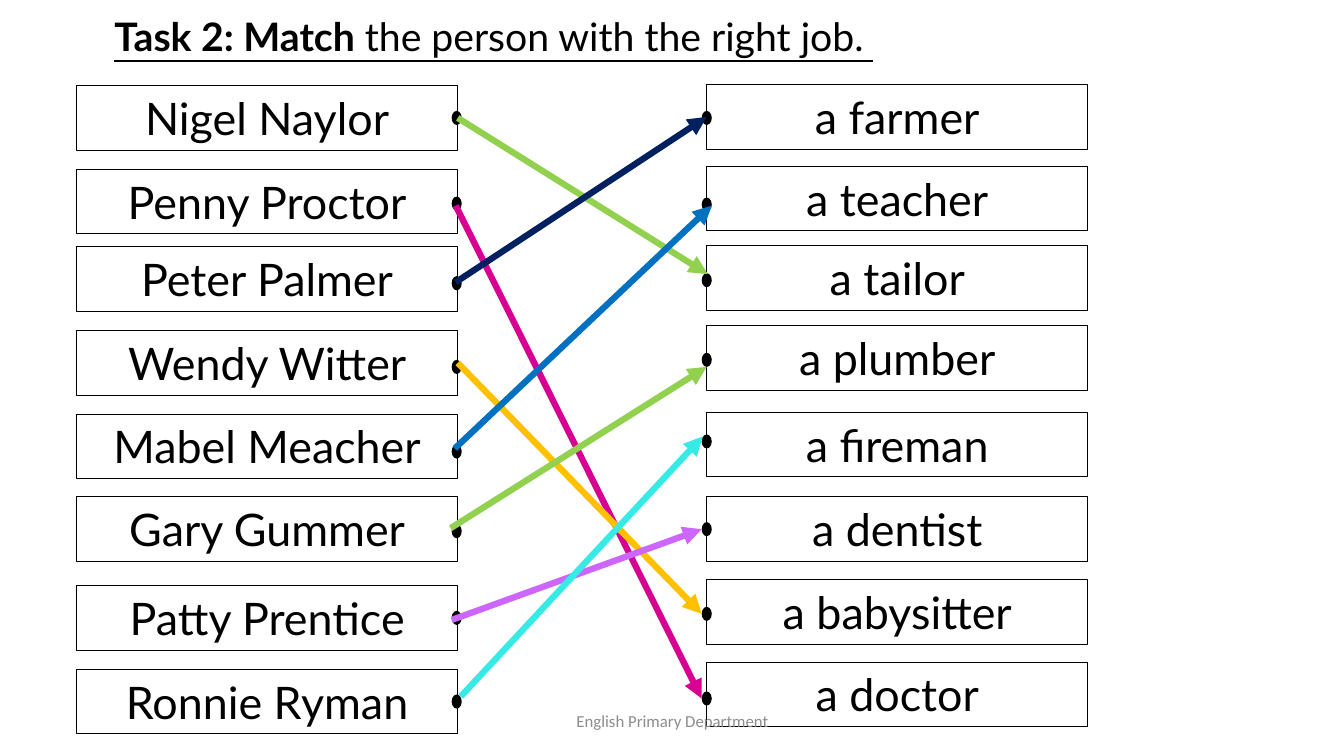
from lxml import etree
from pptx import Presentation
from pptx.dml.color import RGBColor
from pptx.enum import shapes, text
from pptx.oxml.ns import qn
from pptx.util import Inches, Pt

# Content: label, top of box, top of dot
PEOPLE = [
    ("Nigel Naylor", 0.85, 1.10),
    ("Penny Proctor", 1.68, 1.95),
    ("Peter Palmer", 2.45, 2.74),
    ("Wendy Witter", 3.28, 3.57),
    ("Mabel Meacher", 4.11, 4.41),
    ("Gary Gummer", 4.93, 5.20),
    ("Patty Prentice", 5.81, 6.06),
    ("Ronnie Ryman", 6.64, 6.89),
]
JOBS = [
    ("a farmer", 0.84, 1.10),
    ("a teacher", 1.65, 1.96),
    ("a tailor", 2.44, 2.71),
    ("a plumber", 3.23, 3.50),
    ("a fireman", 4.09, 4.31),
    ("a dentist", 4.93, 5.18),
    ("a babysitter", 5.75, 6.02),
    ("a doctor", 6.57, 6.86),
]
# Person, job, start point, end point, colour
MATCHES = [
    ("Nigel Naylor", "a tailor", (4.53, 1.16), (7.02, 2.72), "green"),
    ("Penny Proctor", "a doctor", (4.52, 2.04), (6.96, 6.93), "magenta"),
    ("Peter Palmer", "a farmer", (4.52, 2.80), (7.01, 1.16), "navy"),
    ("Wendy Witter", "a babysitter", (4.53, 3.60), (6.96, 6.09), "amber"),
    ("Mabel Meacher", "a teacher", (4.51, 4.45), (7.06, 2.04), "blue"),
    ("Gary Gummer", "a plumber", (4.47, 5.24), (7.01, 3.64), "green"),
    ("Patty Prentice", "a dentist", (4.48, 6.15), (6.96, 5.25), "violet"),
    ("Ronnie Ryman", "a fireman", (4.57, 6.91), (6.97, 4.33), "cyan"),
]
TITLE_RUNS = [("Task 2: Match", True), (" the person with the right job. ", False)]
FOOTER = "English Primary Department"

COLOURS = {
    "black": "000000", "white": "FFFFFF", "grey": "8C8C8C", "green": "92D050",
    "magenta": "D60093", "navy": "002060", "amber": "FFC000", "blue": "0070C0",
    "violet": "CC66FF", "cyan": "36EAE6",
}
BOX_WIDTH, BOX_HEIGHT = 3.78, 0.64
DOT_WIDTH, DOT_HEIGHT = 0.10, 0.14
PEOPLE_LEFT, JOBS_LEFT = 0.76, 7.01
LEFT_SIDE, RIGHT_SIDE = 1, 3
JOIN_DISTANCE = 0.02


def colour(name):
    return RGBColor.from_string(COLOURS[name])


def add_run(paragraph, words, font_colour="black", **font_format):
    run = paragraph.add_run()
    run.text = words
    run.font.color.rgb = colour(font_colour)
    for name, value in font_format.items():
        setattr(run.font, name, value)


def add_filled(slide, kind, left, top, width, height, fill):
    shape = slide.shapes.add_shape(
        kind, Inches(left), Inches(top), Inches(width), Inches(height))
    shape.shadow.inherit = False
    shape.fill.solid()
    shape.fill.fore_color.rgb = colour(fill)
    shape.line.fill.background()
    return shape


def add_box(slide, left, top, label):
    box = add_filled(slide, shapes.MSO_SHAPE.RECTANGLE,
                     left, top, BOX_WIDTH, BOX_HEIGHT, "white")
    box.line.color.rgb = colour("black")
    box.line.width = Pt(0.75)
    box.text_frame.vertical_anchor = text.MSO_ANCHOR.TOP
    paragraph = box.text_frame.paragraphs[0]
    paragraph.alignment = text.PP_ALIGN.CENTER
    add_run(paragraph, label, name="Lato", size=Pt(32))
    return box


def add_arrow(slide, start, end, line_colour):
    arrow = slide.shapes.add_connector(
        shapes.MSO_CONNECTOR.STRAIGHT, *(Inches(value) for value in start + end))
    arrow.line.color.rgb = colour(line_colour)
    arrow.line.width = Pt(4.5)
    line = arrow.line._get_or_add_ln()
    etree.SubElement(line, qn("a:tailEnd"), type="triangle")
    etree.SubElement(arrow._element.spPr, qn("a:effectLst"))
    return arrow


def is_at(point, x, box_top):
    y = box_top + BOX_HEIGHT / 2
    return abs(point[0] - x) < JOIN_DISTANCE and abs(point[1] - y) < JOIN_DISTANCE


def main():
    presentation = Presentation()
    presentation.slide_width = Inches(13.33)
    presentation.slide_height = Inches(7.5)
    slide = presentation.slides.add_slide(presentation.slide_layouts[5])

    # Title
    title = slide.shapes.title
    title.left, title.top = Inches(-0.85), Inches(-0.13)
    title.width, title.height = Inches(11.5), Inches(1.45)
    frame = title.text_frame
    frame.word_wrap = True
    frame.auto_size = text.MSO_AUTO_SIZE.NONE
    frame.vertical_anchor = text.MSO_ANCHOR.TOP
    frame.margin_top = Inches(0.3)
    paragraph = frame.paragraphs[0]
    paragraph.alignment = text.PP_ALIGN.CENTER
    paragraph.line_spacing = 0.9
    for words, bold in TITLE_RUNS:
        add_run(paragraph, words, name="Lato", size=Pt(28), bold=bold, underline=True)

    # Boxes for people and jobs
    columns = [(PEOPLE, PEOPLE_LEFT, PEOPLE_LEFT + BOX_WIDTH - 0.01),
               (JOBS, JOBS_LEFT, JOBS_LEFT)]
    boxes, tops = {}, {}
    for entries, left, _ in columns:
        for label, top, _ in entries:
            boxes[label] = add_box(slide, left, top, label)
            tops[label] = top

    # Dots on the facing sides
    for entries, _, dot_centre in columns:
        for _, _, dot_top in entries:
            add_filled(slide, shapes.MSO_SHAPE.OVAL, dot_centre - DOT_WIDTH / 2,
                       dot_top, DOT_WIDTH, DOT_HEIGHT, "black")

    # Arrows, joined to a box where they meet the middle of its side
    for person, job, start, end, line_colour in MATCHES:
        arrow = add_arrow(slide, start, end, line_colour)
        if is_at(start, PEOPLE_LEFT + BOX_WIDTH, tops[person]):
            arrow.begin_connect(boxes[person], RIGHT_SIDE)
        if is_at(end, JOBS_LEFT, tops[job]):
            arrow.end_connect(boxes[job], LEFT_SIDE)

    # Footer
    footer = slide.shapes.add_textbox(
        Inches(4.42), Inches(6.95), Inches(4.5), Inches(0.4))
    footer.text_frame.word_wrap = True
    footer.text_frame.vertical_anchor = text.MSO_ANCHOR.MIDDLE
    paragraph = footer.text_frame.paragraphs[0]
    paragraph.alignment = text.PP_ALIGN.CENTER
    add_run(paragraph, FOOTER, "grey", name="Calibri", size=Pt(12))

    presentation.save("out.pptx")


if __name__ == "__main__":
    main()
